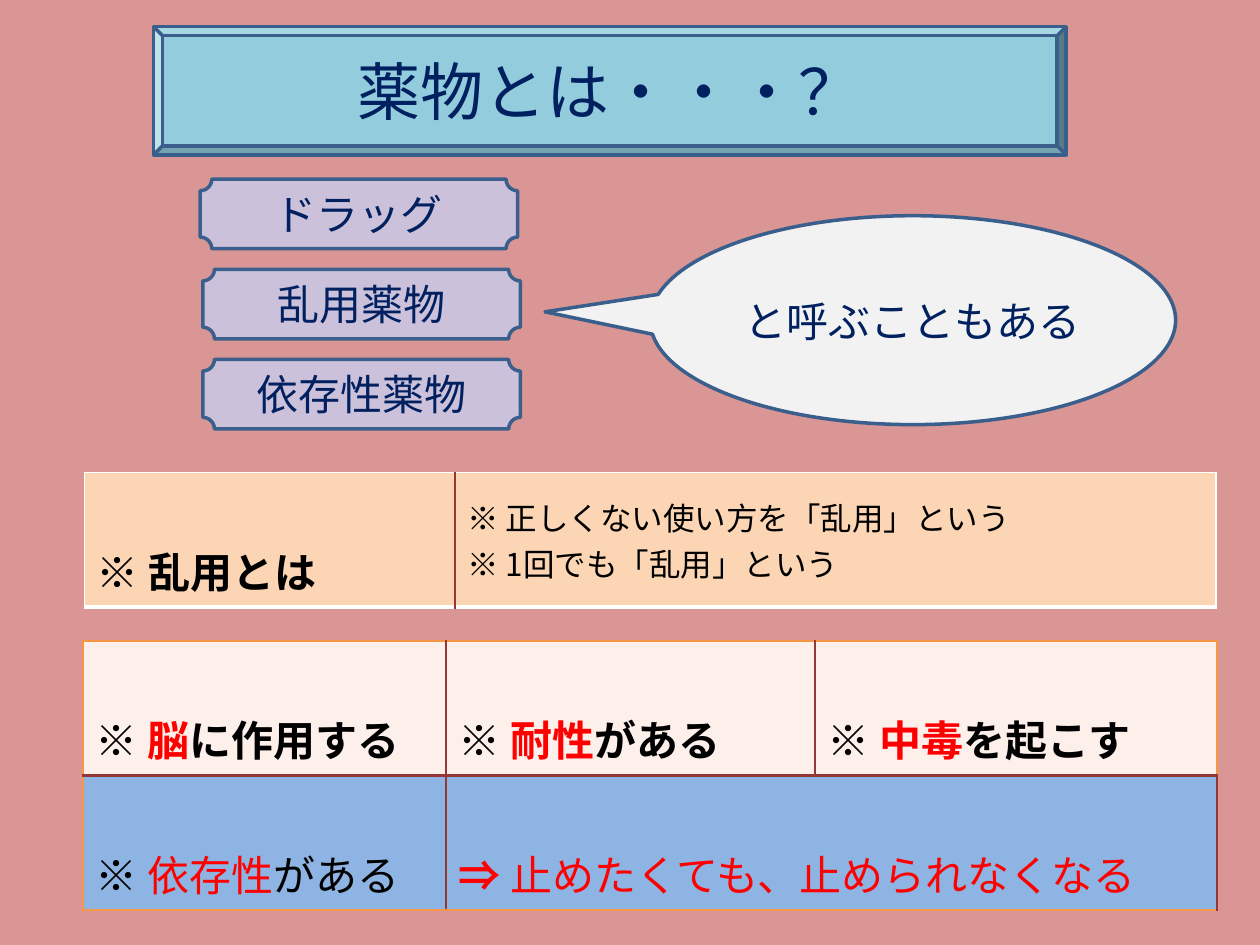
from dataclasses import dataclass

from lxml import etree
from pptx import Presentation
from pptx.dml.color import RGBColor
from pptx.enum.shapes import MSO_SHAPE
from pptx.enum.text import MSO_ANCHOR, PP_ALIGN
from pptx.oxml.ns import qn
from pptx.util import Pt

BEVEL, PLAQUE = MSO_SHAPE.BEVEL, MSO_SHAPE.PLAQUE
CALLOUT = MSO_SHAPE.OVAL_CALLOUT
CENTER, LEFT = PP_ALIGN.CENTER, PP_ALIGN.LEFT
MIDDLE, TOP = MSO_ANCHOR.MIDDLE, MSO_ANCHOR.TOP


@dataclass(frozen=True)
class Theme:
    font: str = "Noto Sans CJK JP"
    title: int = 36
    body: int = 24
    note: int = 18
    backdrop: str = "D99694"
    banner: str = "93CDDD"
    plaque: str = "CCC1DA"
    bubble: str = "F2F2F2"
    outline: str = "3A5F8C"
    navy: str = "002060"
    black: str = "000000"
    red: str = "FF0000"
    peach: str = "FCD5B5"
    blush: str = "FDEFE9"
    blue: str = "8EB4E3"
    divider: tuple = ("953735", 1.5)
    white_edge: tuple = ("FFFFFF", 1)
    white_base: tuple = ("FFFFFF", 3)
    orange_edge: tuple = ("F79646", 1)


THEME = Theme()


def paint(fill, color):
    fill.solid()
    fill.fore_color.rgb = RGBColor.from_string(color)


def write(frame, lines, size=THEME.body, color=THEME.black, bold=False,
          align=LEFT, spacing=1):
    frame.word_wrap = True
    for index, line in enumerate(lines):
        para = frame.paragraphs[0] if index == 0 else frame.add_paragraph()
        para.alignment = align
        para.line_spacing = spacing
        for text, changes in line:
            span = para.add_run()
            span.text = text
            font = span.font
            font.size = Pt(size)
            font.bold = changes.get("bold", bold)
            font.color.rgb = RGBColor.from_string(changes.get("color", color))
            font.name = THEME.font
            east_asian = etree.SubElement(font._element, qn("a:ea"))
            east_asian.set("typeface", THEME.font)


def plain(text):
    return [(text, {})]


def marked(keyword, rest):
    return [("※ ", {}), (keyword, {"color": THEME.red}), (rest, {})]


def add_label(page, box, kind, fill, text, size=THEME.body, adjustments=()):
    shape = page.shapes.add_shape(kind, *map(Pt, box))
    shape.shadow.inherit = False
    for index, value in enumerate(adjustments):
        shape.adjustments[index] = value
    paint(shape.fill, fill)
    paint(shape.line.fill, THEME.outline)
    shape.line.width = Pt(2)
    shape.text_frame.vertical_anchor = MIDDLE
    write(shape.text_frame, [plain(text)], size=size, color=THEME.navy, align=CENTER)


def set_borders(cell, borders):
    properties = cell._tc.get_or_add_tcPr()
    for index, side in enumerate("LRTB"):
        color, width = borders[side]
        line = etree.Element(qn(f"a:ln{side}"), w=str(int(Pt(width))))
        fill = etree.SubElement(line, qn("a:solidFill"))
        etree.SubElement(fill, qn("a:srgbClr"), val=color)
        properties.insert(index, line)


def add_grid(page, box, widths, heights, fills, edge, base):
    rows, columns = len(heights), len(widths)
    table = page.shapes.add_table(rows, columns, *map(Pt, box)).table
    table.first_row = table.horz_banding = False
    for column, width in zip(table.columns, widths):
        column.width = Pt(width)
    for row, height in zip(table.rows, heights):
        row.height = Pt(height)
    for r in range(rows):
        for c in range(columns):
            cell = table.cell(r, c)
            paint(cell.fill, fills[r])
            set_borders(cell, {
                "L": THEME.divider if c else edge,
                "R": THEME.divider if c < columns - 1 else edge,
                "T": THEME.divider if r else edge,
                "B": THEME.divider if r < rows - 1 else base,
            })
    return table


def add_names(page, box):
    left, top, width, height = box
    pitch = 51.5
    names = ["ドラッグ", "乱用薬物", "依存性薬物"]
    for index, (name, shift) in enumerate(zip(names, (0, 1.5, 1.5))):
        spot = (left + shift, top + index * pitch, width, height)
        add_label(page, spot, PLAQUE, THEME.plaque, name)


def add_abuse_table(page, box):
    table = add_grid(page, box, [211.7, 434.9], [59], [THEME.peach],
                     THEME.white_edge, THEME.white_base)
    term, meaning = table.cell(0, 0), table.cell(0, 1)
    term.vertical_anchor = TOP
    write(term.text_frame, [plain("※ 乱用とは")], bold=True, spacing=2)
    meaning.vertical_anchor = MIDDLE
    write(meaning.text_frame,
          [plain("※ 正しくない使い方を「乱用」という"), plain("※ 1回でも「乱用」という")],
          size=THEME.note)


def add_effects_table(page, box):
    table = add_grid(page, box, [207.4, 211, 229.7], [67.7, 62.6],
                     [THEME.blush, THEME.blue],
                     THEME.orange_edge, THEME.orange_edge)
    effects = [("脳", "に作用する"), ("耐性", "がある"), ("中毒", "を起こす")]
    for column, effect in enumerate(effects):
        write(table.cell(0, column).text_frame, [marked(*effect)], bold=True, spacing=2)
    table.cell(1, 1).merge(table.cell(1, 2))
    write(table.cell(1, 0).text_frame, [marked("依存性", "がある")], spacing=2)
    result = [("⇒ ", {"bold": True}), ("止めたくても、止められなくなる", {})]
    write(table.cell(1, 1).text_frame, [result], color=THEME.red, spacing=2)


def main():
    deck = Presentation()
    deck.slide_width, deck.slide_height = Pt(720), Pt(540)
    page = deck.slides.add_slide(deck.slide_layouts[6])
    paint(page.background.fill, THEME.backdrop)
    add_effects_table(page, (47.5, 366.3, 648.1, 130.3))
    add_label(page, (87.8, 15.3, 521.5, 73.2), BEVEL, THEME.banner,
              "薬物とは・・・？", size=THEME.title, adjustments=[0.07])
    add_names(page, (114.4, 102.4, 181.4, 39.7))
    add_label(page, (371.5, 123.3, 300.3, 119.4), CALLOUT, THEME.bubble,
              "と呼ぶこともある", adjustments=[-0.7, -0.04])
    add_abuse_table(page, (48.2, 270, 646.6, 59))
    deck.save("out.pptx")


if __name__ == "__main__":
    main()
